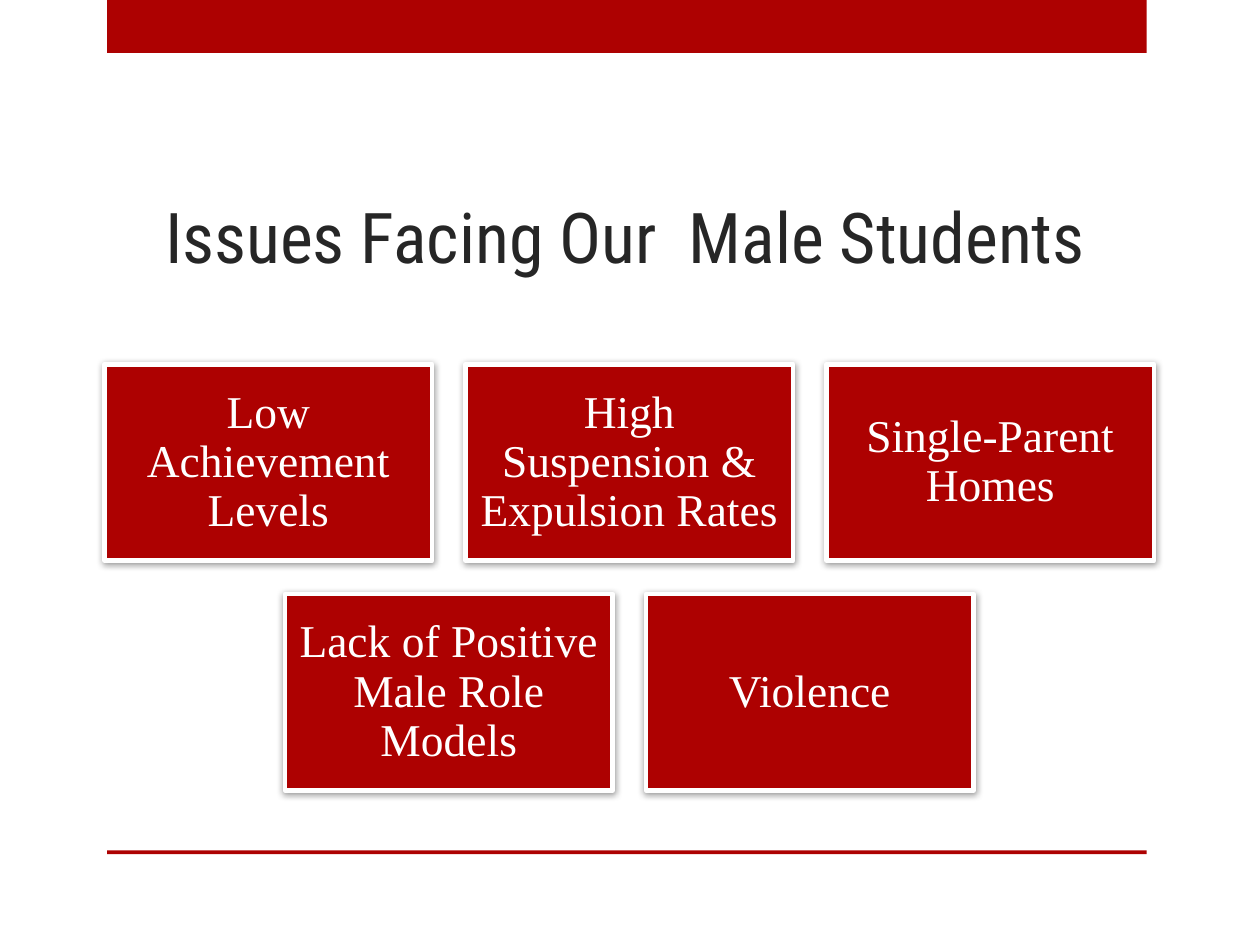
from dataclasses import dataclass
from typing import NamedTuple

from lxml import etree
from pptx import Presentation, util as u
from pptx.dml.color import RGBColor
from pptx.enum import shapes, text
from pptx.oxml import ns

PX = 9144  # EMU in one px, 100 px to the inch


class Box(NamedTuple):
    left: int
    top: int
    width: int
    height: int

    def emu(self):
        return [round(length * PX) for length in self]


@dataclass(frozen=True)
class Theme:
    red: str = "AD0101"
    white: str = "FFFFFF"
    ink: str = "262626"
    shadow: str = "000000"
    title_font: str = "Roboto Condensed"
    card_font: str = "Times New Roman"
    title_size: int = 40
    card_size: int = 26
    border: float = 2.75


THEME = Theme()
ISSUES = [
    ["Low Achievement Levels", "High Suspension & Expulsion Rates", "Single-Parent Homes"],
    ["Lack of Positive Male Role Models", "Violence"],
]


def set_all(target, values):
    for name, value in values.items():
        setattr(target, name, value)


def write(frame, words, font, size, color, spacing, **frame_format):
    set_all(frame, {"word_wrap": True, "auto_size": text.MSO_AUTO_SIZE.NONE, **frame_format})
    para = frame.paragraphs[0]
    set_all(para, {"alignment": text.PP_ALIGN.CENTER, "line_spacing": spacing})
    span = para.add_run()
    span.text = words
    set_all(span.font, {"name": font, "size": u.Pt(size), "bold": False})
    span.font.color.rgb = RGBColor.from_string(color)


def add_rectangle(page, box):
    rectangle = page.shapes.add_shape(shapes.MSO_SHAPE.RECTANGLE, *box.emu())
    rectangle.shadow.inherit = False
    rectangle.fill.solid()
    rectangle.fill.fore_color.rgb = RGBColor.from_string(THEME.red)
    rectangle.line.fill.background()
    return rectangle


def add_soft_shadow(shape):
    """Fill the empty effect list with a faint shadow just below the shape."""
    effects = shape._element.spPr.find(ns.qn("a:effectLst"))
    shadow = etree.SubElement(effects, ns.qn("a:outerShdw"), blurRad=str(u.Pt(4)),
                              dist=str(u.Pt(1)), dir=str(88 * 60000), rotWithShape="0")
    color = etree.SubElement(shadow, ns.qn("a:srgbClr"), val=THEME.shadow)
    etree.SubElement(color, ns.qn("a:alpha"), val="40000")


def add_frame_bars(page, box):
    """Put a thick bar at the top of the box and a thin one at its foot."""
    foot = 3
    add_rectangle(page, box._replace(height=42))
    add_rectangle(page, box._replace(top=box.top + box.height - foot, height=foot))


def add_title(page, box, words):
    title = page.shapes.title
    set_all(title, dict(zip(("left", "top", "width", "height"), box.emu())))
    write(title.text_frame, words, THEME.title_font, THEME.title_size, THEME.ink, 1.0,
          vertical_anchor=text.MSO_ANCHOR.BOTTOM)


def add_card(page, box, words):
    card = add_rectangle(page, box)
    add_soft_shadow(card)
    card.line.color.rgb = RGBColor.from_string(THEME.white)
    card.line.width = u.Pt(THEME.border)
    margins = {f"margin_{side}": 11 * PX for side in ("left", "top", "right", "bottom")}
    write(card.text_frame, words, THEME.card_font, THEME.card_size, THEME.white, 0.9,
          vertical_anchor=text.MSO_ANCHOR.MIDDLE, **margins)


def add_card_grid(page, box, rows):
    """Lay out rows of equal cards, each row centred in the box."""
    width, height = 260, 156
    most = max(len(row) for row in rows)
    gap = (box.width - most * width) / (most - 1)
    for i, row in enumerate(rows):
        row_width = len(row) * (width + gap) - gap
        left = box.left + (box.width - row_width) / 2
        top = box.top + i * (height + gap)
        for j, words in enumerate(row):
            add_card(page, Box(left + j * (width + gap), top, width, height), words)


def main():
    deck = Presentation()
    deck.slide_width, deck.slide_height = 1000 * PX, 750 * PX
    page = deck.slides.add_slide(deck.slide_layouts[5])
    add_frame_bars(page, Box(85, 0, 825, 678))
    add_title(page, Box(92, 67, 808, 158), "Issues Facing Our  Male Students")
    add_card_grid(page, Box(83, 289, 833, 338), ISSUES)
    deck.save("out.pptx")


if __name__ == "__main__":
    main()
